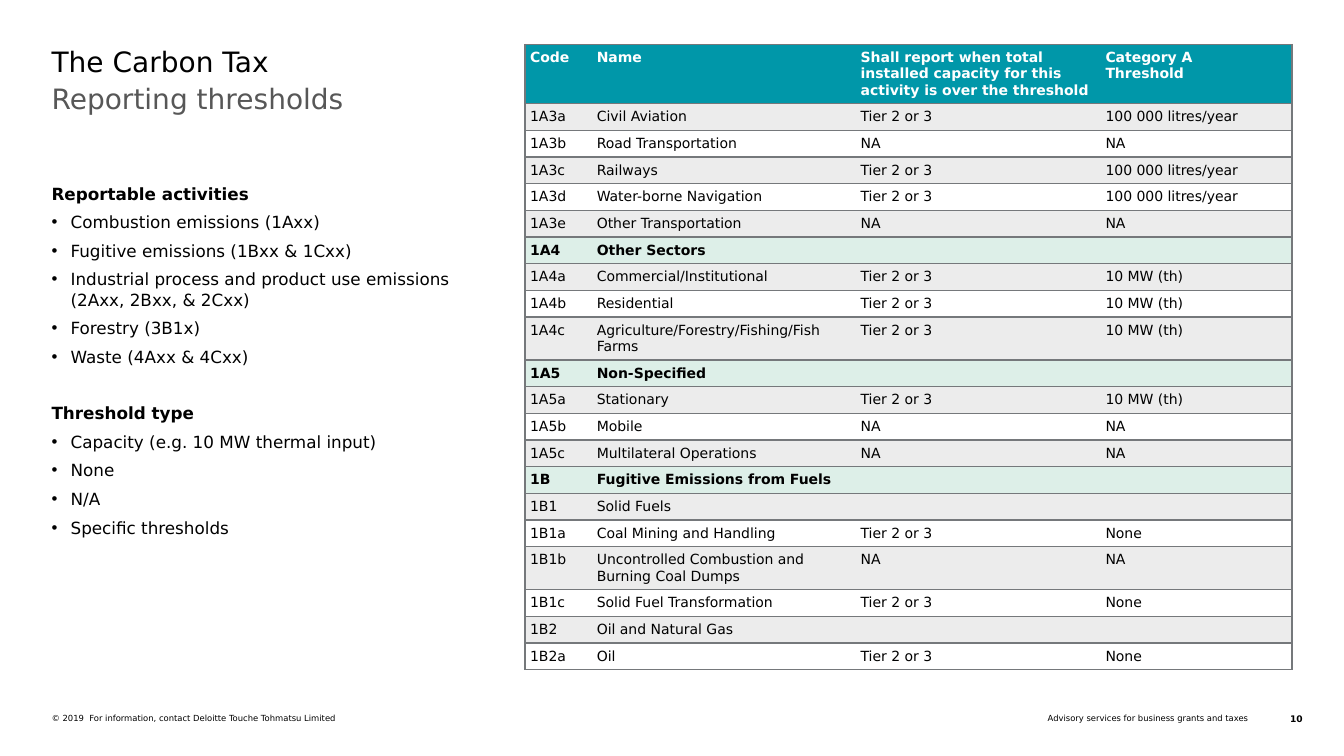
import pptx
import pptx.dml.color
import pptx.enum.text
import pptx.oxml.ns
import pptx.util
import lxml.etree

Cm = pptx.util.Cm
Pt = pptx.util.Pt
qn = pptx.oxml.ns.qn
ALIGN = pptx.enum.text.PP_ALIGN

FONT = "DejaVu Sans"
COLORS = {
    "text": "000000",
    "subtitle": "575757",
    "header_text": "FFFFFF",
    "header": "0097A9",
    "section": "DDEFE8",
    "band": "ECECEC",
    "plain": "FFFFFF",
    "rule": "75787B",
}
NO_TABLE_STYLE = "{2D5ABB26-0587-4C30-8999-92F81FD0307C}"
LEFT = Cm(1.3)
LISTS = {
    "Reportable activities": [
        "Combustion emissions (1Axx)",
        "Fugitive emissions (1Bxx & 1Cxx)",
        "Industrial process and product use emissions\n(2Axx, 2Bxx, & 2Cxx)",
        "Forestry (3B1x)",
        "Waste (4Axx & 4Cxx)",
    ],
    "Threshold type": [
        "Capacity (e.g. 10 MW thermal input)",
        "None",
        "N/A",
        "Specific thresholds",
    ],
}
HEADER = ("Code", "Name",
          "Shall report when total installed capacity for this activity is over the threshold",
          "Category A\nThreshold")
TIER = "Tier 2 or 3"
LITRES = "100 000 litres/year"
THERMAL = "10 MW (th)"
ACTIVITIES = [
    ("1A3a", "Civil Aviation", TIER, LITRES),
    ("1A3b", "Road Transportation", "NA", "NA"),
    ("1A3c", "Railways", TIER, LITRES),
    ("1A3d", "Water-borne Navigation", TIER, LITRES),
    ("1A3e", "Other Transportation", "NA", "NA"),
    ("1A4", "Other Sectors", "", ""),
    ("1A4a", "Commercial/Institutional", TIER, THERMAL),
    ("1A4b", "Residential", TIER, THERMAL),
    ("1A4c", "Agriculture/Forestry/Fishing/Fish Farms", TIER, THERMAL),
    ("1A5", "Non-Specified", "", ""),
    ("1A5a", "Stationary", TIER, THERMAL),
    ("1A5b", "Mobile", "NA", "NA"),
    ("1A5c", "Multilateral Operations", "NA", "NA"),
    ("1B", "Fugitive Emissions from Fuels", "", ""),
    ("1B1", "Solid Fuels", "", ""),
    ("1B1a", "Coal Mining and Handling", TIER, "None"),
    ("1B1b", "Uncontrolled Combustion and Burning Coal Dumps", "NA", "NA"),
    ("1B1c", "Solid Fuel Transformation", TIER, "None"),
    ("1B2", "Oil and Natural Gas", "", ""),
    ("1B2a", "Oil", TIER, "None"),
]
SECTIONS = {"1A4", "1A5", "1B"}
TWO_LINE = {"1A4c", "1B1b"}
COLUMN_WIDTHS = (1.68, 6.65, 6.17, 4.83)


def rgb(name):
    return pptx.dml.color.RGBColor.from_string(COLORS[name])


def style(paragraph, size, color="text", bold=False, align=ALIGN.LEFT):
    paragraph.alignment = align
    font = paragraph.font
    font.name, font.size, font.bold = FONT, Pt(size), bold
    font.color.rgb = rgb(color)


def set_bullet(paragraph, bulleted):
    properties = paragraph._p.get_or_add_pPr()
    indent = Cm(0.48) if bulleted else 0
    properties.set("marL", str(indent))
    properties.set("indent", str(-indent))
    if bulleted:
        lxml.etree.SubElement(properties, qn("a:buChar")).set("char", "•")
    else:
        lxml.etree.SubElement(properties, qn("a:buNone"))


def prepare_frame(shape):
    frame = shape.text_frame
    frame.margin_left = frame.margin_right = frame.margin_top = frame.margin_bottom = 0
    frame.word_wrap = True
    frame.auto_size = pptx.enum.text.MSO_AUTO_SIZE.NONE
    frame.vertical_anchor = pptx.enum.text.MSO_ANCHOR.TOP
    return frame


def place(shape, top, width, height):
    shape.left, shape.top, shape.width, shape.height = LEFT, Cm(top), Cm(width), Cm(height)
    return prepare_frame(shape)


def fill_heading(placeholder, text, top, height, color):
    heading = place(placeholder, top, 31.27, height).paragraphs[0]
    heading.text = text
    set_bullet(heading, False)
    heading.space_before = Pt(0)
    style(heading, 20, color)


def fill_lists(placeholder):
    frame = place(placeholder, 4.62, 11.05, 12.88)
    entries = [(text, text in LISTS) for topic, items in LISTS.items() for text in (topic, *items)]
    for position, (text, is_topic) in enumerate(entries):
        entry = frame.add_paragraph() if position else frame.paragraphs[0]
        entry.text = text
        set_bullet(entry, not is_topic)
        entry.space_before = Pt(20 if is_topic and position else 0)
        entry.space_after = Pt(6)
        style(entry, 12, bold=is_topic)


def add_footer(slide, text, left, width, size=6, bold=False, align=ALIGN.LEFT):
    box = slide.shapes.add_textbox(Cm(left), Cm(17.98), Cm(width), Cm(0.26))
    line = prepare_frame(box).paragraphs[0]
    line.text = text
    style(line, size, bold=bold, align=align)


def add_borders(cell, sides):
    properties = cell._tc.get_or_add_tcPr()
    for side in sides:
        border = lxml.etree.SubElement(properties, qn(f"a:ln{side}"))
        border.set("w", str(Pt(1)))
        solid = lxml.etree.SubElement(border, qn("a:solidFill"))
        lxml.etree.SubElement(solid, qn("a:srgbClr")).set("val", COLORS["rule"])


def fill_cell(cell, text, sides, fill, color, bold):
    cell.margin_left = cell.margin_right = cell.margin_top = cell.margin_bottom = Cm(0.13)
    add_borders(cell, sides)
    cell.fill.solid()
    cell.fill.fore_color.rgb = rgb(fill)
    cell.text = text
    for paragraph in cell.text_frame.paragraphs:
        style(paragraph, 10, color, bold)
        if not text:
            lxml.etree.SubElement(paragraph._p, qn("a:endParaRPr")).set("sz", "1000")


def add_thresholds(slide):
    rows = [HEADER, *ACTIVITIES]
    table = slide.shapes.add_table(len(rows), len(HEADER), Cm(13.23), Cm(1.12),
                                   Cm(sum(COLUMN_WIDTHS)), Cm(15.6)).table
    table.first_row = table.horz_banding = False
    table._tbl.tblPr.find(qn("a:tableStyleId")).text = NO_TABLE_STYLE
    for column, width in zip(table.columns, COLUMN_WIDTHS):
        column.width = Cm(width)
    last = len(HEADER) - 1
    for r, row in enumerate(rows):
        is_header, is_section = r == 0, row[0] in SECTIONS
        table.rows[r].height = Cm(1.49 if is_header else 1.06 if row[0] in TWO_LINE else 0.66)
        band = "band" if r % 2 else "plain"
        fill = "header" if is_header else "section" if is_section else band
        color = "header_text" if is_header else "text"
        for c, text in enumerate(row):
            sides = {0: "LTB", last: "RTB"}.get(c, "TB")
            fill_cell(table.cell(r, c), text, sides, fill, color, is_header or is_section)


def main():
    deck = pptx.Presentation()
    deck.slide_width, deck.slide_height = Cm(33.87), Cm(19.05)
    slide = deck.slides.add_slide(deck.slide_layouts[3])
    fill_heading(slide.shapes.title, "The Carbon Tax", 1.12, 0.94, "text")
    fill_heading(slide.placeholders[1], "Reporting thresholds", 2.06, 2.1, "subtitle")
    fill_lists(slide.placeholders[2])
    add_thresholds(slide)
    add_footer(slide, "© 2019  For information, contact Deloitte Touche Tohmatsu Limited", 1.3, 14.88)
    add_footer(slide, "Advisory services for business grants and taxes", 17.86, 13.59,
               align=ALIGN.RIGHT)
    add_footer(slide, "10", 31.7, 1.13, size=6.5, bold=True, align=ALIGN.RIGHT)
    deck.save("out.pptx")


if __name__ == "__main__":
    main()
